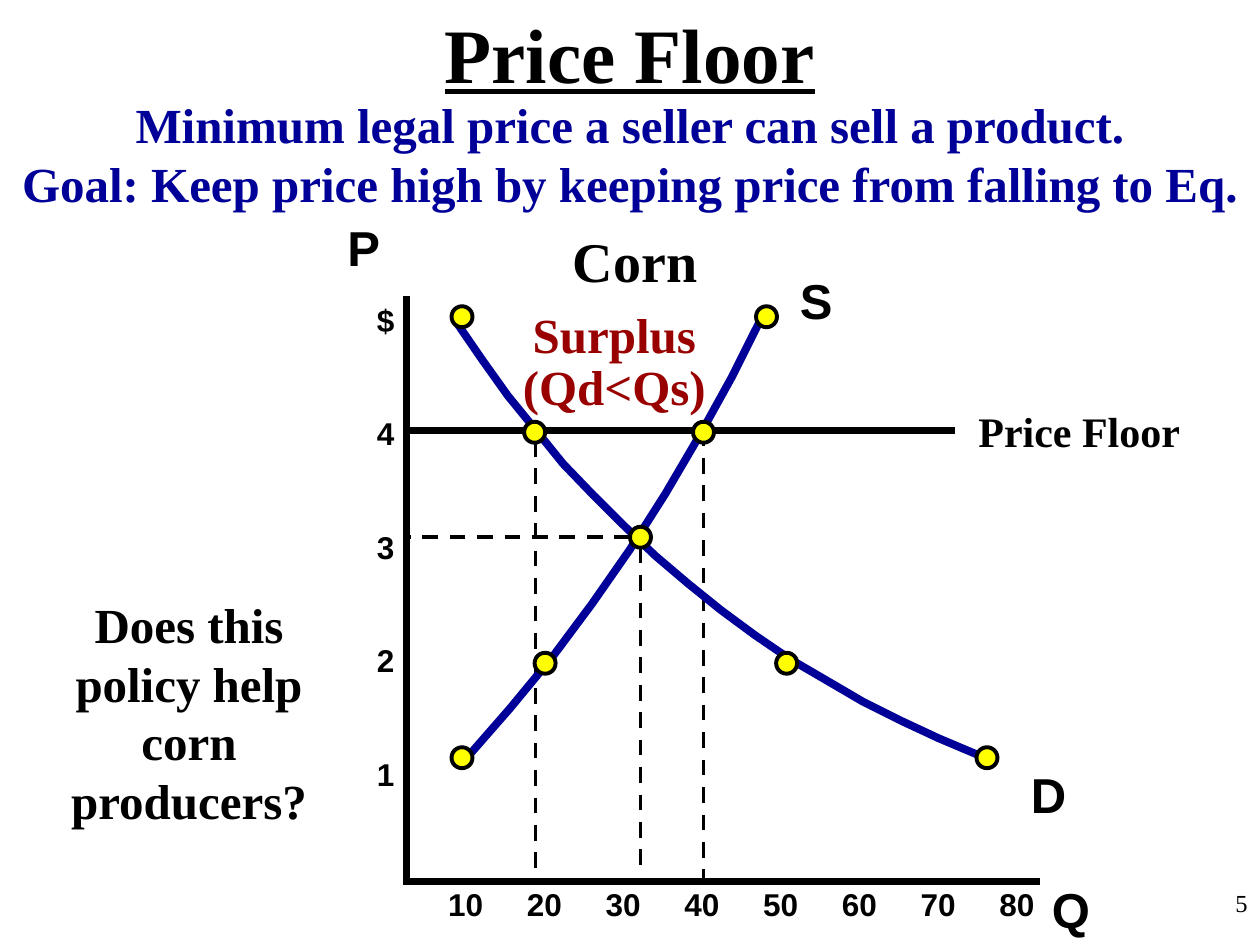
from dataclasses import dataclass
from lxml.etree import SubElement
from pptx import Presentation
from pptx.dml.color import RGBColor
from pptx.enum.dml import MSO_LINE
from pptx.enum.shapes import MSO_CONNECTOR, MSO_SHAPE
from pptx.enum.text import MSO_ANCHOR, PP_ALIGN
from pptx.oxml.ns import qn
from pptx.util import Pt


@dataclass(frozen=True)
class Theme:
    black: str = "000000"
    navy: str = "000099"
    red: str = "990000"
    yellow: str = "FFFF00"
    serif: str = "Times New Roman"
    sans: str = "Arial"
    title: int = 44
    head: int = 32
    body: int = 28
    label: int = 24
    tick: int = 18
    page: int = 14
    thick: float = 4.5
    axis: float = 4
    thin: float = 2.25


LOOK = Theme()
LEFT, MID, RIGHT = PP_ALIGN.LEFT, PP_ALIGN.CENTER, PP_ALIGN.RIGHT


@dataclass(frozen=True)
class Label:
    text: str
    box: tuple[float, float, float, float]
    size: int
    font: str = LOOK.serif
    color: str = LOOK.black
    align: PP_ALIGN = MID
    bold: bool = True
    under: bool = False
    middle: bool = False
    lead: float = 1.0
    gap: float = 0
    tab: float = 0


@dataclass(frozen=True)
class Rule:
    start: tuple[float, float]
    end: tuple[float, float]
    width: float
    dash: bool = False


def apply(target, values: dict) -> None:
    for name, value in values.items():
        setattr(target, name, value)


def add_tabs(para, step: float, count: int) -> None:
    stops = SubElement(para._p.get_or_add_pPr(), qn("a:tabLst"))
    for i in range(1, count + 1):
        SubElement(stops, qn("a:tab"), pos=str(Pt(step * i)), algn="l")


def draw_label(slide, item: Label) -> None:
    frame = slide.shapes.add_textbox(*map(Pt, item.box)).text_frame
    apply(frame, {
        "word_wrap": True,
        "vertical_anchor": MSO_ANCHOR.MIDDLE if item.middle else MSO_ANCHOR.TOP,
    })
    for i, line in enumerate(item.text.split("\n")):
        para = frame.add_paragraph() if i else frame.paragraphs[0]
        apply(para, {"alignment": item.align, "line_spacing": item.lead})
        if i and item.gap:
            para.space_before = Pt(item.gap)
        if item.tab:
            add_tabs(para, item.tab, line.count("\t"))
        run = para.add_run()
        run.text = line
        apply(run.font, {"name": item.font, "size": Pt(item.size),
                         "bold": item.bold, "underline": item.under})
        run.font.color.rgb = RGBColor.from_string(item.color)


def set_line(line, color: str, width: float) -> None:
    line.color.rgb = RGBColor.from_string(color)
    line.width = Pt(width)


def draw_rule(slide, rule: Rule) -> None:
    ends = map(Pt, rule.start + rule.end)
    link = slide.shapes.add_connector(MSO_CONNECTOR.STRAIGHT, *ends)
    set_line(link.line, LOOK.black, rule.width)
    if rule.dash:
        link.line.dash_style = MSO_LINE.DASH
    SubElement(link._element.spPr, qn("a:effectLst"))


def draw_curve(slide, points: list[tuple[float, float]]) -> None:
    spots = [(Pt(x), Pt(y)) for x, y in points]
    pen = slide.shapes.build_freeform(*spots[0])
    pen.add_line_segments(spots[1:], close=False)
    curve = pen.convert_to_shape()
    curve.fill.background()
    curve.shadow.inherit = False
    set_line(curve.line, LOOK.navy, LOOK.thick)


def draw_dot(slide, x: float, y: float, size: float = 12) -> None:
    """Draw a marker centred on x, y."""
    dot = slide.shapes.add_shape(MSO_SHAPE.OVAL, Pt(x - size / 2),
                                 Pt(y - size / 2), Pt(size), Pt(size))
    dot.fill.solid()
    dot.fill.fore_color.rgb = RGBColor.from_string(LOOK.yellow)
    dot.shadow.inherit = False
    set_line(dot.line, LOOK.black, LOOK.thin)


RULES = [
    Rule((234, 246), (546, 246), LOOK.thick),
    Rule((306, 252), (306, 499), LOOK.thin, True),
    Rule((402, 246), (402, 504), LOOK.thin, True),
    Rule((360, 307), (234, 307), LOOK.thin, True),
    Rule((366, 313), (366, 499), LOOK.thin, True),
    Rule((232.5, 169), (232.5, 505.5), LOOK.axis),
    Rule((231, 503.5), (594, 503.5), LOOK.axis),
]
DEMAND = [
    (261.4, 185), (275.8, 205.9), (290.2, 226.1), (306, 245.5), (321.8, 265),
    (339.1, 283), (356.4, 300.2), (374.4, 317.5), (393.1, 333.4),
    (411.8, 348.5), (431.3, 362.9), (451.4, 376.6), (472.3, 388.8),
    (493.2, 401), (514.8, 411.8), (536.4, 421.9), (558.7, 431.3),
]
SUPPLY = [
    (266.4, 433.4), (291.6, 404.6), (315.4, 375.8), (338.4, 344.9),
    (360, 313.9), (380.2, 282.2), (399.6, 249.1), (418.3, 215.3),
    (435.6, 180.7),
]
DOTS = [
    (264, 181), (305.5, 247), (449.5, 379), (564, 433), (264, 433),
    (311.5, 379), (402, 247), (438, 181), (366, 307),
]
MARKS = [("Q", 594, 499), ("P", 191.5, 121), ("D", 582, 433.5), ("S", 450, 151)]
LABELS = [Label(text, (x, y, 36, 41), LOOK.body, LOOK.sans, align=LEFT)
          for text, x, y in MARKS] + [
    Label("$\n4\n3\n2\n1", (208, 168.5, 24.5, 289), LOOK.tick, LOOK.sans,
          align=RIGHT, gap=43.2),
    Label("\t".join(str(n) for n in range(10, 90, 10)), (249, 502, 356.5, 29),
          LOOK.tick, LOOK.sans, align=LEFT, tab=45),
    Label("5", (570, 504, 150, 36), LOOK.page, align=RIGHT, bold=False),
    Label("Surplus\n(Qd<Qs)", (288, 174, 126, 68), LOOK.body,
          color=LOOK.red, lead=0.9),
    Label("Minimum legal price a seller can sell a product.\n"
          "Goal: Keep price high by keeping price from falling to Eq.",
          (0, 50.5, 720, 74), LOOK.body, color=LOOK.navy, middle=True),
    Label("Corn", (234, 126, 258, 45), LOOK.head),
    Label("Does this policy help corn producers?", (12, 336, 192, 142), LOOK.body),
    Label("Price Floor", (552, 228, 156, 36), LOOK.label, align=LEFT),
    Label("Price Floor", (0, 0, 720, 60), LOOK.title, under=True),
]


def main() -> None:
    deck = Presentation()
    apply(deck, {"slide_width": Pt(720), "slide_height": Pt(540)})
    slide = deck.slides.add_slide(deck.slide_layouts[6])
    for rule in RULES:
        draw_rule(slide, rule)
    for curve in (DEMAND, SUPPLY):
        draw_curve(slide, curve)
    for x, y in DOTS:
        draw_dot(slide, x, y)
    for item in LABELS:
        draw_label(slide, item)
    deck.save("out.pptx")


if __name__ == "__main__":
    main()
